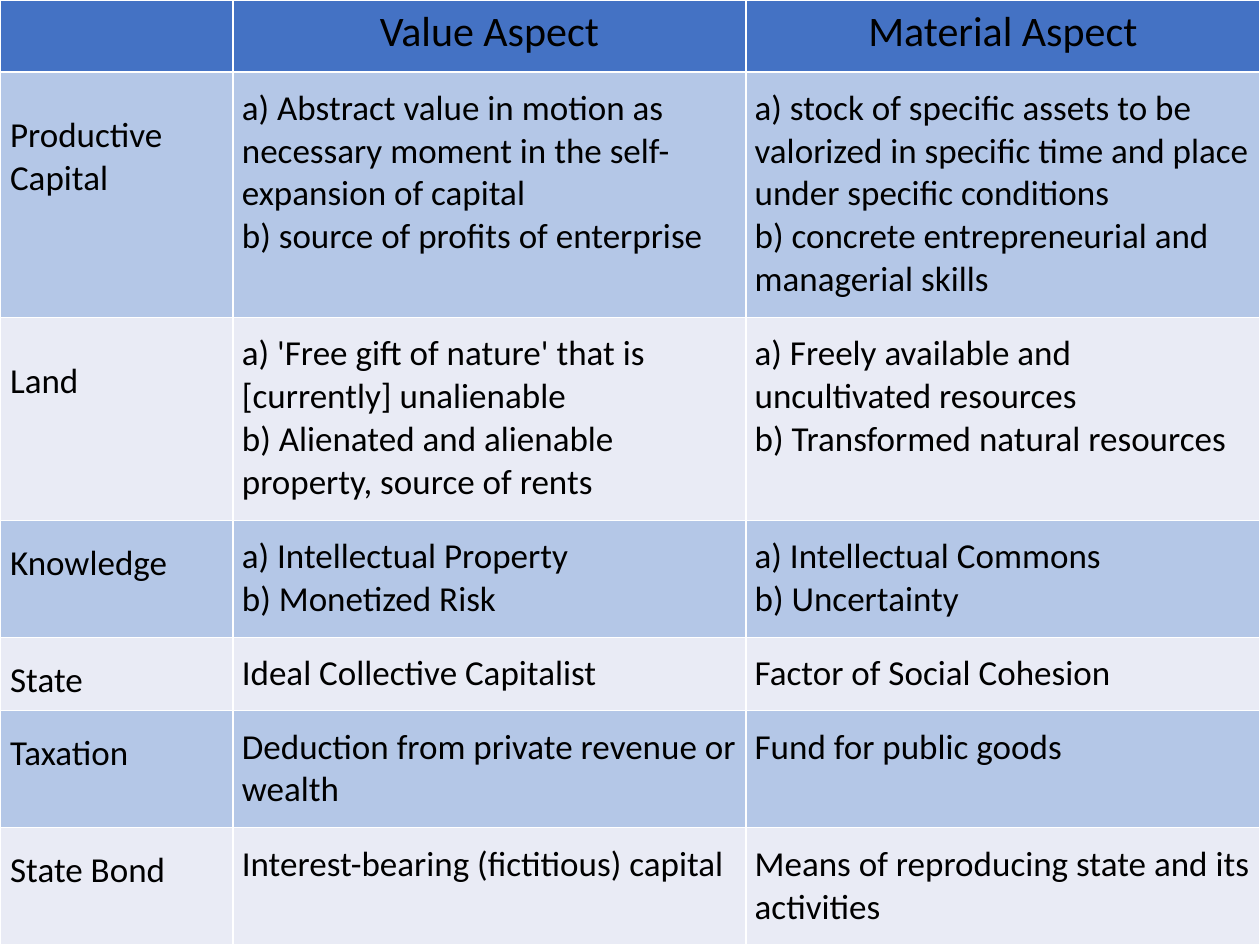
from lxml.etree import SubElement
from pptx import Presentation
from pptx.dml.color import RGBColor
from pptx.enum.text import PP_ALIGN
from pptx.oxml.ns import qn
from pptx.util import Inches, Pt

BLACK = RGBColor(0x00, 0x00, 0x00)
HEADER_BLUE = RGBColor(0x44, 0x72, 0xC4)
BAND_BLUE = RGBColor(0xB4, 0xC7, 0xE7)
BAND_PALE = RGBColor(0xE9, 0xEB, 0xF5)
WHITE = RGBColor(0xFF, 0xFF, 0xFF)

COLUMN_WIDTHS = [1.85, 4.07, 4.08]
ROW_HEIGHTS = [0.57, 1.95, 1.61, 0.93, 0.58, 0.93, 0.93]
LABEL_TOPS = [0.05, 0.34, 0.34, 0.17, 0.17, 0.17, 0.17]

# Each line of a cell is a paragraph.
ROWS = [
    ("", "Value Aspect", "Material Aspect"),
    ("Productive\nCapital",
     "a) Abstract value in motion as necessary moment in the self-expansion of capital\n"
     "b) source of profits of enterprise",
     "a) stock of specific assets to be valorized in specific time and place "
     "under specific conditions\n"
     "b) concrete entrepreneurial and managerial skills"),
    ("Land",
     "a) 'Free gift of nature' that is [currently] unalienable\n"
     "b) Alienated and alienable property, source of rents",
     "a) Freely available and uncultivated resources\n"
     "b) Transformed natural resources"),
    ("Knowledge",
     "a) Intellectual Property\nb) Monetized Risk",
     "a) Intellectual Commons\nb) Uncertainty"),
    ("State", "Ideal Collective Capitalist", "Factor of Social Cohesion"),
    ("Taxation", "Deduction from private revenue or wealth", "Fund for public goods"),
    ("State Bond", "Interest-bearing (fictitious) capital",
     "Means of reproducing state and its activities"),
]


def style_cell(cell, fill_color):
    """Give the cell a fill and thin white borders on all sides."""
    properties = cell._tc.get_or_add_tcPr()
    for side in ("a:lnL", "a:lnR", "a:lnT", "a:lnB"):
        line = SubElement(properties, qn(side), w=str(Pt(1)))
        line_fill = SubElement(line, qn("a:solidFill"))
        SubElement(line_fill, qn("a:srgbClr"), val=str(WHITE))
    cell.fill.solid()
    cell.fill.fore_color.rgb = fill_color


deck = Presentation()
deck.slide_width = Inches(10)
deck.slide_height = Inches(7.5)
page = deck.slides.add_slide(deck.slide_layouts[6])

table = page.shapes.add_table(
    len(ROWS), len(COLUMN_WIDTHS), 0, 0, Inches(10), Inches(7.5)).table
for column, width in zip(table.columns, COLUMN_WIDTHS):
    column.width = Inches(width)
for row, height in zip(table.rows, ROW_HEIGHTS):
    row.height = Inches(height)

for row_index, texts in enumerate(ROWS):
    is_header = row_index == 0
    band = BAND_BLUE if row_index % 2 else BAND_PALE
    for column_index, text in enumerate(texts):
        cell = table.cell(row_index, column_index)
        style_cell(cell, HEADER_BLUE if is_header else band)
        is_label = column_index == 0
        cell.margin_left = cell.margin_right = Inches(0.08 if is_label else 0.07)
        if is_label:
            cell.margin_top = Inches(LABEL_TOPS[row_index])
            cell.margin_bottom = 0
        else:
            cell.margin_top = cell.margin_bottom = Inches(0.05 if is_header else 0.12)
        cell.text = text
        for para in cell.text_frame.paragraphs:
            para.alignment = PP_ALIGN.CENTER if is_header else PP_ALIGN.LEFT
            para.font.name = "Calibri"
            para.font.size = Pt(24 if is_header else 20)
            para.font.bold = False
            para.font.color.rgb = BLACK

deck.save("out.pptx")
